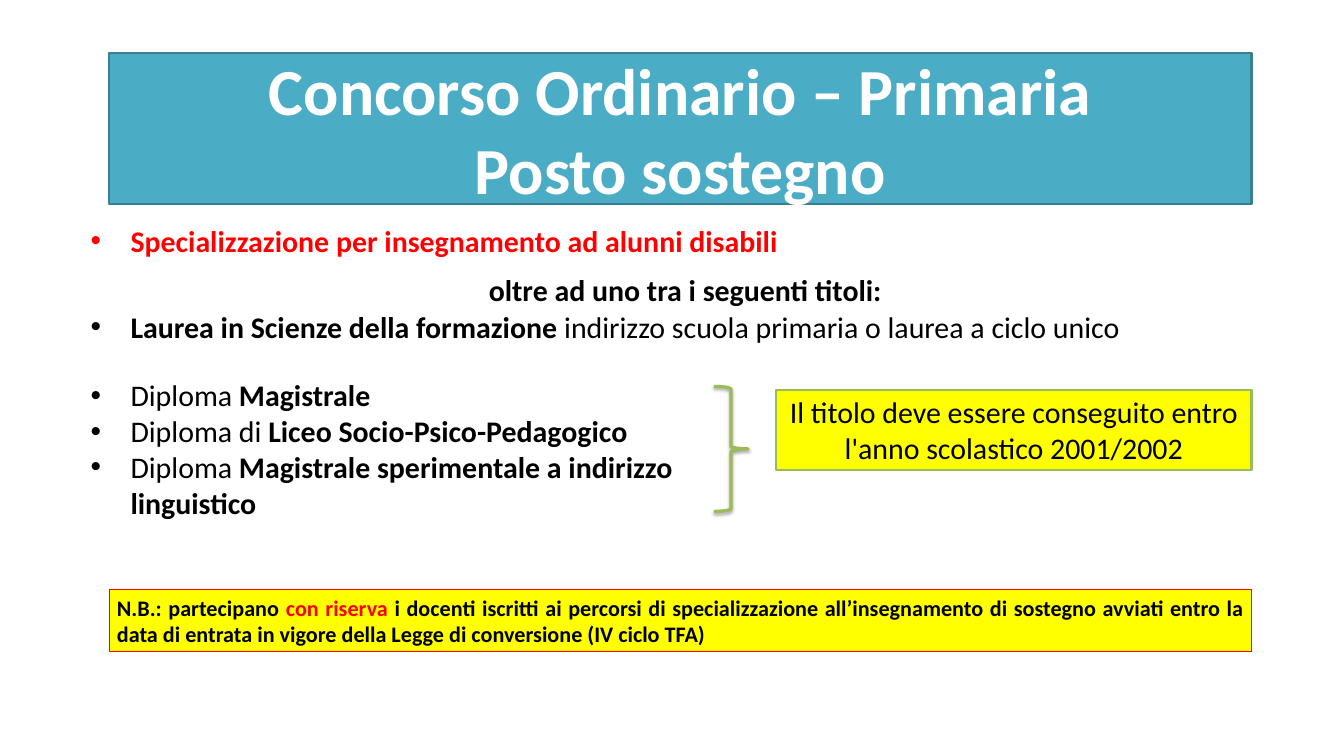
import pptx
import pptx.dml.color
import pptx.enum.shapes
import pptx.enum.text
import pptx.oxml
import pptx.oxml.ns
import pptx.util
from lxml import etree

Pt = pptx.util.Pt
RGBColor = pptx.dml.color.RGBColor
ALIGN = pptx.enum.text.PP_ALIGN
SHAPE = pptx.enum.shapes.MSO_SHAPE
qn = pptx.oxml.ns.qn

WHITE = RGBColor(0xFF, 0xFF, 0xFF)
BLACK = RGBColor(0x00, 0x00, 0x00)
RED = RGBColor(0xFF, 0x00, 0x00)
YELLOW = RGBColor(0xFF, 0xFF, 0x00)
TEAL = RGBColor(0x4B, 0xAC, 0xC6)
DARK_TEAL = RGBColor(0x37, 0x7F, 0x92)
GREEN = RGBColor(0x9B, 0xBB, 0x59)

FONT = "Calibri"
BODY_SIZE = 27
LIST_LEFT = 74.9
BAND_LEFT = 98.6
BAND_WIDTH = 1032.5
LINE_HEIGHT = 40.3
BULLET_INDENT = 36


def add_bullet(paragraph):
    properties = paragraph._p.get_or_add_pPr()
    properties.set("marL", str(Pt(BULLET_INDENT)))
    properties.set("indent", str(-Pt(BULLET_INDENT)))
    etree.SubElement(properties, qn("a:buFont")).set("typeface", "Arial")
    etree.SubElement(properties, qn("a:buChar")).set("char", "•")


def write_paragraphs(shape, paragraphs, size, align, bulleted=False):
    text_frame = shape.text_frame
    text_frame.word_wrap = True
    for index, pieces in enumerate(paragraphs):
        paragraph = text_frame.add_paragraph() if index else text_frame.paragraphs[0]
        paragraph.alignment = align
        if bulleted:
            add_bullet(paragraph)
        for text, bold, color in pieces:
            paragraph.add_run().text = text
            run = paragraph.runs[-1]
            run.font.name = FONT
            run.font.size = Pt(size)
            run.font.bold = bold
            run.font.color.rgb = color


def add_text(slide, box, paragraphs, align=ALIGN.LEFT, bulleted=True):
    shape = slide.shapes.add_textbox(*map(Pt, box))
    write_paragraphs(shape, paragraphs, BODY_SIZE, align, bulleted)


def add_panel(slide, box, fill, line, line_width, paragraphs, size, align):
    shape = slide.shapes.add_shape(SHAPE.RECTANGLE, *map(Pt, box))
    shape.shadow.inherit = False
    shape.fill.solid()
    shape.fill.fore_color.rgb = fill
    shape.line.color.rgb = line
    shape.line.width = Pt(line_width)
    shape.text_frame.vertical_anchor = pptx.enum.text.MSO_ANCHOR.MIDDLE
    write_paragraphs(shape, paragraphs, size, align)


def add_title(slide):
    shape = slide.shapes.add_shape(
        SHAPE.RECTANGLE, Pt(BAND_LEFT), Pt(48.2), Pt(BAND_WIDTH), Pt(136.1))
    shape.shadow.inherit = False
    shape.fill.solid()
    shape.fill.fore_color.rgb = TEAL
    shape.line.color.rgb = DARK_TEAL
    shape.line.width = Pt(2)
    text_frame = shape.text_frame
    text_frame.vertical_anchor = pptx.enum.text.MSO_ANCHOR.MIDDLE
    text_frame.margin_left = text_frame.margin_right = Pt(10.8)
    text_frame.margin_top = text_frame.margin_bottom = Pt(5.8)
    text_frame.text = "Concorso Ordinario – Primaria\vPosto sostegno"
    paragraph = text_frame.paragraphs[0]
    paragraph.alignment = ALIGN.CENTER
    for run in paragraph.runs:
        run.font.name = FONT
        run.font.size = Pt(59.4)
        run.font.bold = True
        run.font.color.rgb = WHITE


def add_brace(slide, box):
    shape = slide.shapes.add_shape(SHAPE.RIGHT_BRACE, *map(Pt, box))
    shape.shadow.inherit = False
    shape.fill.background()
    shape.line.color.rgb = GREEN
    shape.line.width = Pt(3)
    effects = shape._element.spPr.find(qn("a:effectLst"))
    shadow = etree.SubElement(
        effects, qn("a:outerShdw"), blurRad=str(Pt(3.1)), dist=str(Pt(1.8)),
        dir="5400000", rotWithShape="0")
    color = etree.SubElement(shadow, qn("a:srgbClr"), val=str(BLACK))
    etree.SubElement(color, qn("a:alpha"), val="35000")


def main():
    presentation = pptx.Presentation()
    presentation.slide_width = Pt(1214.6)
    presentation.slide_height = Pt(680.4)
    slide = presentation.slides.add_slide(presentation.slide_layouts[6])

    add_title(slide)
    add_text(slide, (LIST_LEFT, 197.3, BAND_WIDTH, LINE_HEIGHT), [
        [("Specializzazione per insegnamento ad alunni disabili", True, RED)]])
    add_text(slide, (105.1, 241.9, 1028.2, LINE_HEIGHT), [
        [("oltre ad uno tra i seguenti titoli:", True, BLACK)]],
        ALIGN.CENTER, bulleted=False)
    add_text(slide, (LIST_LEFT, 275, 1088.6, LINE_HEIGHT), [
        [("Laurea in Scienze della formazione ", True, BLACK),
         ("indirizzo scuola primaria o laurea a ciclo unico", False, BLACK)]],
        ALIGN.JUSTIFY)

    diplomas = [
        ("Diploma ", "Magistrale"),
        ("Diploma di ", "Liceo Socio-Psico-Pedagogico"),
        ("Diploma ", "Magistrale sperimentale a indirizzo linguistico"),
    ]
    add_text(slide, (LIST_LEFT, 337, 586.1, 138.2), [
        [(kind, False, BLACK), (name, True, BLACK)] for kind, name in diplomas])
    add_brace(slide, (645.1, 349.2, 31, 113))
    add_panel(slide, (701.3, 352.1, 429.8, 72.7), YELLOW, GREEN, 2, [
        [("Il titolo deve essere conseguito entro l'anno scolastico 2001/2002",
          False, BLACK)]], BODY_SIZE, ALIGN.CENTER)

    add_panel(slide, (BAND_LEFT, 532.8, BAND_WIDTH, 55.9), YELLOW, RED, 0.75, [
        [("N.B.: partecipano ", True, BLACK),
         ("con riserva ", True, RED),
         ("i docenti iscritti ai percorsi di specializzazione all’insegnamento "
          "di sostegno avviati entro la data di entrata in vigore della Legge "
          "di conversione (IV ciclo TFA)", True, BLACK)]], 20, ALIGN.JUSTIFY)

    presentation.save("out.pptx")


if __name__ == "__main__":
    main()
